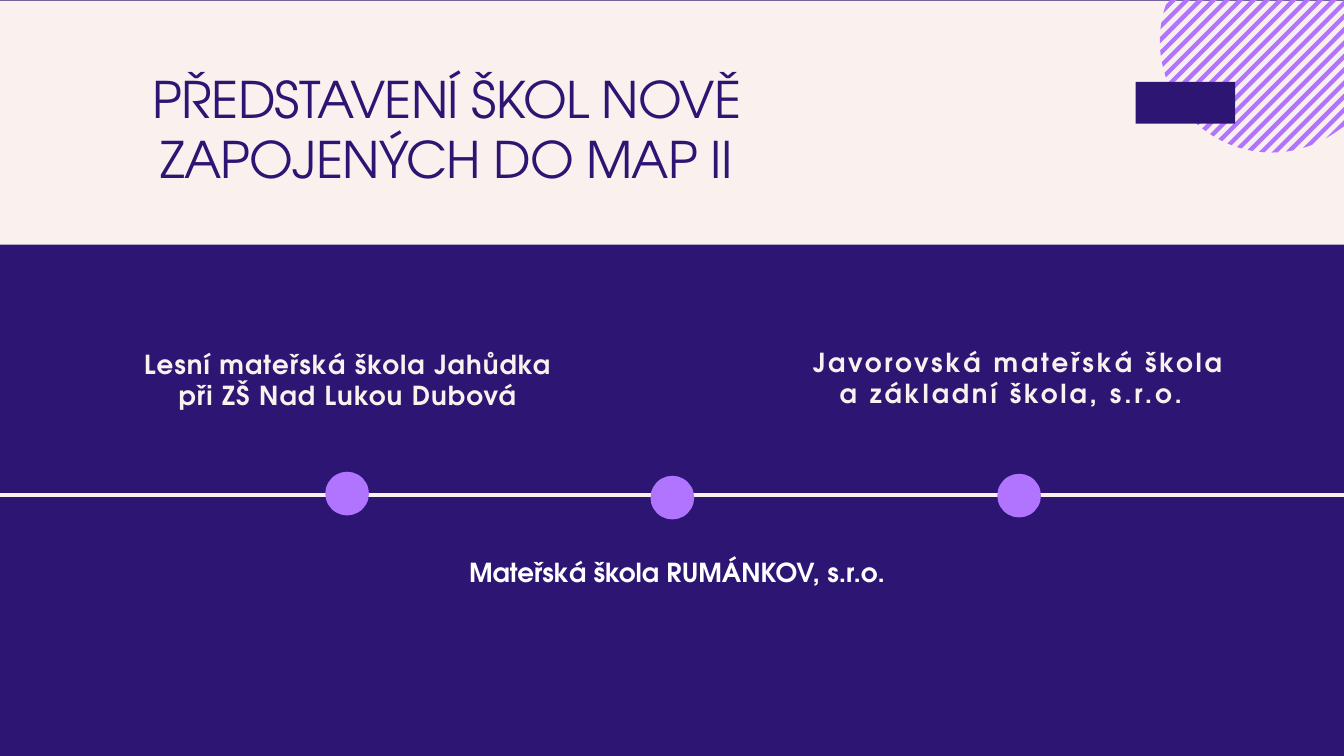
import math
from typing import NamedTuple

from lxml import etree
from pptx import Presentation
from pptx import util as u
from pptx.dml.color import RGBColor
from pptx.enum import shapes, text
from pptx.oxml import ns

INDIGO = RGBColor(0x2D, 0x16, 0x73)
CREAM = RGBColor(0xFA, 0xF1, 0xEF)
VIOLET = RGBColor(0xB0, 0x74, 0xFF)
WHITE = RGBColor(0xFF, 0xFF, 0xFF)
FONT = "TeX Gyre Adventor"

WIDTH, HEIGHT = 20, 11.25
LINE_Y = 7.37
DOT_SIZE = 0.65
DISC_X, DISC_Y, DISC_RADIUS = 18.92, 0.61, 1.66
STRIPE_COUNT, STRIPE_WIDTH = 23, 0.09
FIRST_STRIPE, LAST_STRIPE = 17.42, 21.79


class Area(NamedTuple):
    left: float
    top: float
    width: float
    height: float

    def lengths(self) -> list:
        return [u.Inches(value) for value in self]


class Label(NamedTuple):
    area: Area
    lines: list
    color: RGBColor = CREAM
    size: float = 28
    bold: bool = True
    tracking: float = 0
    inset: tuple = (0, 0)
    margin: float = 0
    indent: float = 0
    spacing: float | None = None
    grows: bool = False


LABELS = [
    Label(Area(1.11, 1.01, 11.07, 1.94), ["PŘEDSTAVENÍ ŠKOL NOVĚ ZAPOJENÝCH DO MAP II"],
          color=INDIGO, size=54, bold=False, tracking=-0.8, margin=0.01),
    Label(Area(1.25, 5.18, 7.84, 0.8),
          ["Lesní mateřská škola Jahůdka", "při ZŠ Nad Lukou Dubová"], tracking=1.2),
    Label(Area(11.83, 5.18, 6.42, 0.91), ["Javorovská mateřská škola a základní škola, s.r.o."],
          tracking=3.1, margin=0.01, indent=0.24, spacing=32.3),
    Label(Area(6.62, 8.23, 6.91, 0.57), ["Mateřská škola RUMÁNKOV, s.r.o."],
          color=WHITE, inset=(0.1, 0.05), grows=True),
]
DOTS = [Area(left, top, DOT_SIZE, DOT_SIZE)
        for left, top in [(4.84, 7.02), (9.68, 7.08), (14.84, 7.05)]]


def set_values(target, values: dict) -> None:
    for name, value in values.items():
        setattr(target, name, value)


def paint(shape, color: RGBColor) -> None:
    shape.shadow.inherit = False
    shape.fill.solid()
    shape.fill.fore_color.rgb = color
    shape.line.fill.background()


def add_preset(page, kind, area: Area, color: RGBColor) -> None:
    paint(page.shapes.add_shape(kind, *area.lengths()), color)


def add_timeline(page) -> None:
    line = page.shapes.add_connector(
        shapes.MSO_CONNECTOR.STRAIGHT,
        u.Inches(0), u.Inches(LINE_Y), u.Inches(WIDTH), u.Inches(LINE_Y))
    line.line.color.rgb = CREAM
    line.line.width = u.Pt(3.85)
    etree.SubElement(line._element.spPr, ns.qn("a:effectLst"))


def edge_start(total: float) -> tuple:
    offset = (total - DISC_X - DISC_Y) / 2
    reach = math.sqrt(max(DISC_RADIUS ** 2 / 2 - offset ** 2, 0))
    x = min(DISC_X + offset - reach, WIDTH)
    return x, total - x


def edge_end(total: float) -> tuple:
    x = min(total, WIDTH)
    return x, total - x


def add_striped_disc(page) -> None:
    pitch = (LAST_STRIPE - FIRST_STRIPE) / (STRIPE_COUNT - 1)
    builder = None
    for index in range(STRIPE_COUNT):
        near = FIRST_STRIPE + index * pitch
        far = near + STRIPE_WIDTH
        corners = [edge_start(near), edge_start((near + far) / 2), edge_start(far),
                   edge_end(far), edge_end(near)]
        points = [(u.Inches(x), u.Inches(y)) for x, y in corners]
        if builder is None:
            builder = page.shapes.build_freeform(*points[0])
        else:
            builder.move_to(*points[0])
        builder.add_line_segments(points[1:], close=True)
    paint(builder.convert_to_shape(), VIOLET)


def add_label(page, label: Label) -> None:
    box = page.shapes.add_textbox(*label.area.lengths())
    across, down = (u.Inches(value) for value in label.inset)
    fit = text.MSO_AUTO_SIZE.SHAPE_TO_FIT_TEXT if label.grows else text.MSO_AUTO_SIZE.NONE
    set_values(box.text_frame, {
        "word_wrap": True, "auto_size": fit,
        "margin_left": across, "margin_right": across,
        "margin_top": down, "margin_bottom": down})
    for index, line in enumerate(label.lines):
        para = box.text_frame.add_paragraph() if index else box.text_frame.paragraphs[0]
        para.alignment = text.PP_ALIGN.CENTER
        if label.spacing:
            para.line_spacing = u.Pt(label.spacing)
        properties = para._p.get_or_add_pPr()
        properties.set("marL", str(u.Inches(label.margin)))
        properties.set("indent", str(u.Inches(label.indent)))
        span = para.add_run()
        span.text = line
        set_values(span.font, {"name": FONT, "size": u.Pt(label.size), "bold": label.bold})
        span.font.color.rgb = label.color
        span._r.get_or_add_rPr().set("spc", str(round(label.tracking * 100)))


def main() -> None:
    deck = Presentation()
    set_values(deck, {"slide_width": u.Inches(WIDTH), "slide_height": u.Inches(HEIGHT)})
    page = deck.slides.add_slide(deck.slide_layouts[6])
    page.background.fill.solid()
    page.background.fill.fore_color.rgb = INDIGO

    add_preset(page, shapes.MSO_SHAPE.RECTANGLE, Area(0, 0.01, WIDTH, 3.63), CREAM)
    add_timeline(page)
    for dot in DOTS:
        add_preset(page, shapes.MSO_SHAPE.OVAL, dot, VIOLET)
    add_striped_disc(page)
    add_preset(page, shapes.MSO_SHAPE.RECTANGLE, Area(16.9, 1.22, 1.48, 0.62), INDIGO)
    for label in LABELS:
        add_label(page, label)
    deck.save("out.pptx")


if __name__ == "__main__":
    main()
